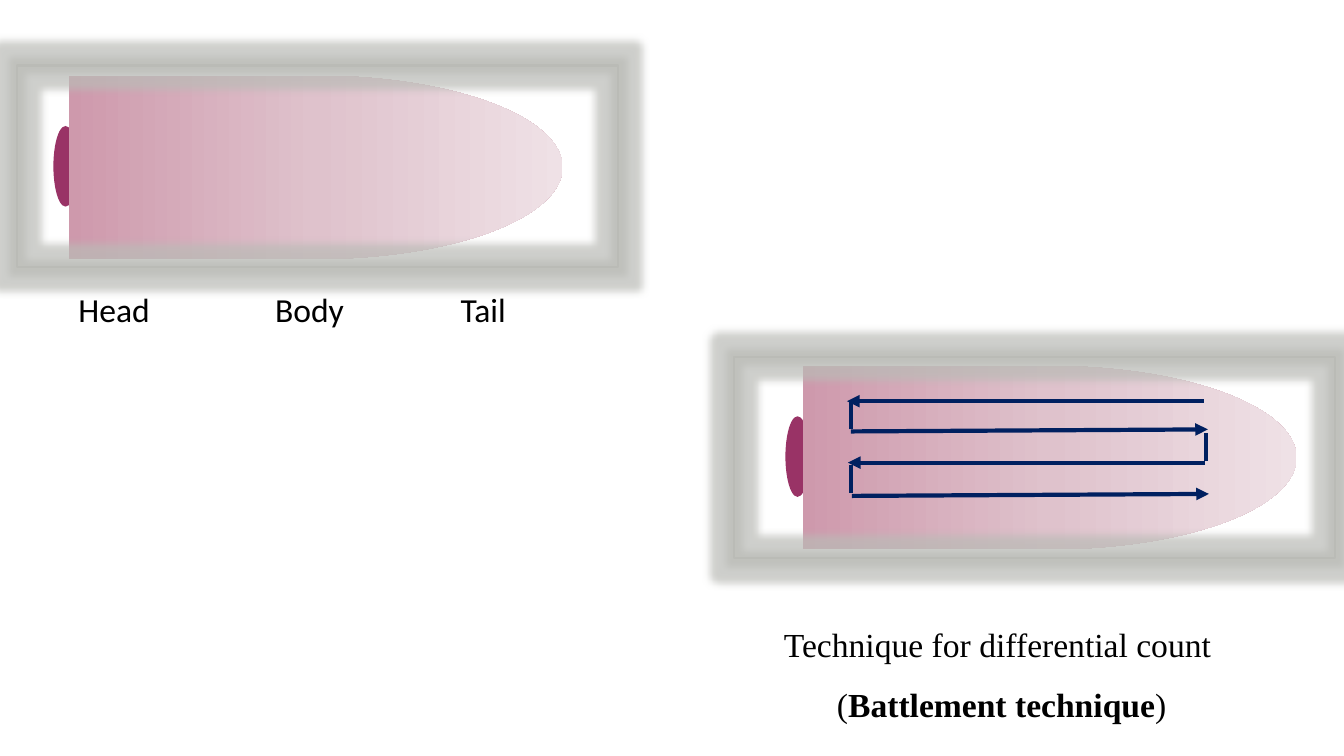
from lxml.etree import SubElement
from pptx import Presentation
from pptx.dml.color import RGBColor
from pptx.enum.shapes import MSO_CONNECTOR, MSO_SHAPE
from pptx.enum.text import MSO_AUTO_SIZE, PP_ALIGN
from pptx.oxml.ns import qn
from pptx.util import Inches, Pt

BLOOD = "993366"
SMEAR_STOPS = [(0, "CE99AC"), (50, "DFC2CC"), (100, "EFE1E6")]
GLASS = "BABBB6"
NAVY = "002060"
BLACK = "000000"

LABELS = [("Head", 0.68, 0.99), ("Body", 2.63, 0.89), ("Tail", 4.47, 0.81)]
SWEEPS = [
    (11.94, 3.98, 8.4, 3.98),
    (8.44, 4.28, 11.98, 4.26),
    (11.95, 4.59, 8.41, 4.59),
    (8.45, 4.92, 11.99, 4.9),
]
TURNS = [
    (8.44, 4.26, 8.44, 3.99),
    (11.96, 4.57, 11.96, 4.3),
    (8.44, 4.89, 8.44, 4.61),
]


def color(value):
    """Turn a hex string into a colour."""
    return RGBColor.from_string(value)


def add_preset(page, preset, left, top, width, height):
    """Add a preset shape without shadow."""
    shape = page.shapes.add_shape(
        preset, Inches(left), Inches(top), Inches(width), Inches(height))
    shape.shadow.inherit = False
    return shape


def add_drop(page, left, top):
    """Add the drop of blood at the start of a smear."""
    drop = add_preset(page, MSO_SHAPE.OVAL, left, top, 0.24, 0.8)
    drop.fill.solid()
    drop.fill.fore_color.rgb = color(BLOOD)
    drop.line.fill.background()


def add_smear(page, left, top):
    """Add a smear that fades from head to tail."""
    smear = add_preset(page, MSO_SHAPE.FLOWCHART_DELAY, left, top, 4.9, 1.82)
    smear.fill.gradient()
    smear.fill.gradient_angle = 0
    stops = smear.element.spPr.find(qn("a:gradFill")).find(qn("a:gsLst"))
    for stop in list(stops):
        stops.remove(stop)
    for percent, value in SMEAR_STOPS:
        stop = SubElement(stops, qn("a:gs"), pos=str(percent * 1000))
        SubElement(stop, qn("a:srgbClr"), val=value)
    smear.line.fill.background()


def add_glass(page, left, top):
    """Add the glowing outline of a glass slide."""
    glass = add_preset(page, MSO_SHAPE.RECTANGLE, left, top, 5.96, 2)
    glass.fill.background()
    glass.line.color.rgb = color(GLASS)
    glass.line.width = Pt(1.5)
    effects = glass.element.spPr.find(qn("a:effectLst"))
    glow = SubElement(effects, qn("a:glow"), rad=str(Pt(11)))
    tint = SubElement(glow, qn("a:srgbClr"), val=GLASS)
    SubElement(tint, qn("a:alpha"), val="70000")


def add_track(page, ends, arrow=False):
    """Add one straight part of the counting path."""
    track = page.shapes.add_connector(
        MSO_CONNECTOR.STRAIGHT, *[Inches(value) for value in ends])
    track.line.color.rgb = color(NAVY)
    track.line.width = Pt(3)
    if arrow:
        SubElement(track.line._get_or_add_ln(), qn("a:tailEnd"), type="triangle")
    SubElement(track._element.spPr, qn("a:effectLst"))


def add_text(page, paragraphs, left, top, width, height, font="Calibri",
             align=PP_ALIGN.LEFT, spacing=1.0, wrap=True):
    """Add a text box whose paragraphs are lists of (text, bold) spans."""
    box = page.shapes.add_textbox(
        Inches(left), Inches(top), Inches(width), Inches(height))
    frame = box.text_frame
    frame.word_wrap = wrap
    frame.auto_size = MSO_AUTO_SIZE.SHAPE_TO_FIT_TEXT
    for index, spans in enumerate(paragraphs):
        para = frame.add_paragraph() if index else frame.paragraphs[0]
        para.alignment = align
        para.line_spacing = spacing
        for text, bold in spans:
            span = para.add_run()
            span.text = text
            span.font.name = font
            span.font.size = Pt(24)
            span.font.bold = bold
            span.font.color.rgb = color(BLACK)


def main():
    """Build the blood smear slide."""
    deck = Presentation()
    deck.slide_width, deck.slide_height = Inches(13.33), Inches(7.5)
    page = deck.slides.add_slide(deck.slide_layouts[6])

    for drop_left, smear_left, top in [(0.53, 0.68, 0.75), (7.79, 7.96, 3.63)]:
        add_drop(page, drop_left, top + 0.5)
        add_smear(page, smear_left, top)
    for label, left, width in LABELS:
        add_text(page, [[(label, False)]], left, 2.82, width, 0.5, wrap=False)
    caption = [
        [("Technique for differential count ", False)],
        [("(", False), ("Battlement technique", True), (")", False)],
    ]
    add_text(page, caption, 6.78, 5.94, 6.31, 1.31, font="Times New Roman",
             align=PP_ALIGN.CENTER, spacing=1.5)
    for sweep in SWEEPS:
        add_track(page, sweep, arrow=True)
    for turn in TURNS:
        add_track(page, turn)
    for left, top in [(7.28, 3.54), (0.17, 0.65)]:
        add_glass(page, left, top)
    deck.save("out.pptx")


if __name__ == "__main__":
    main()
